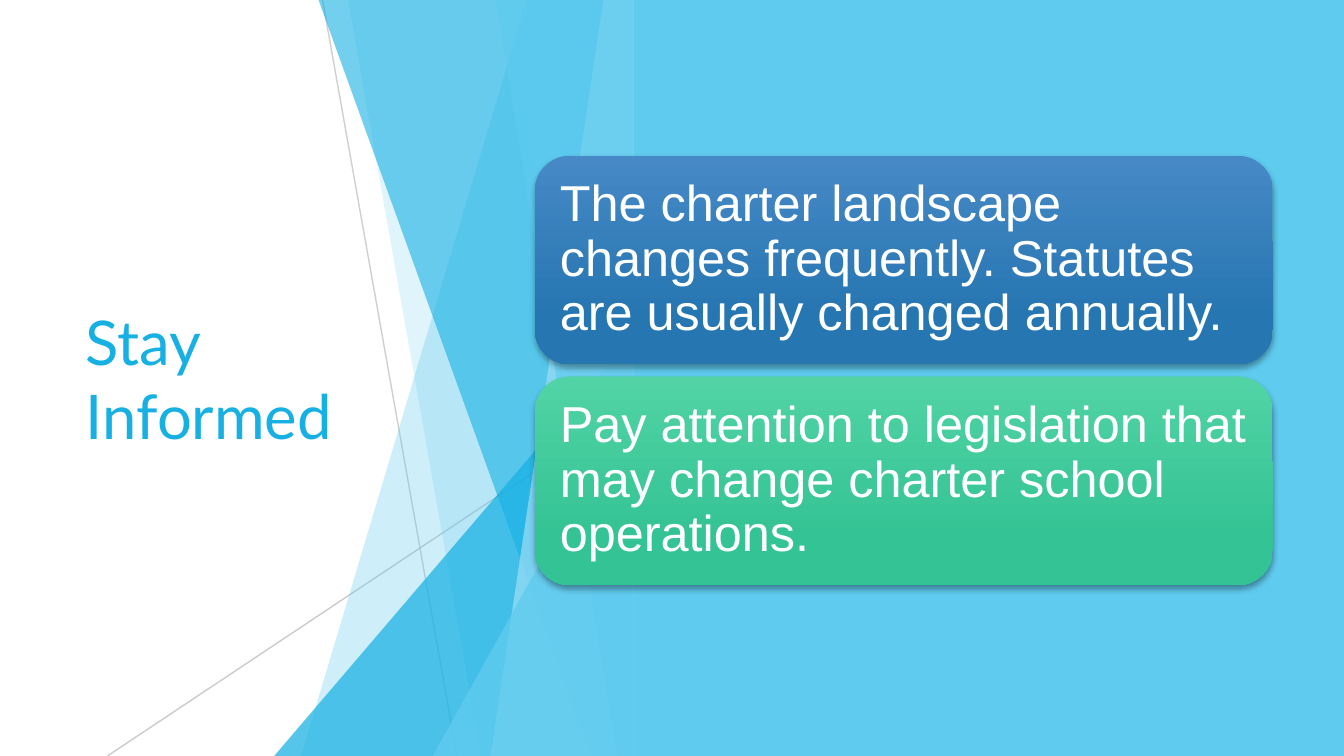
"""Build the "Stay Informed" slide: facet artwork, a title and two message cards."""
from lxml import etree
from pptx import Presentation
from pptx import util as u
from pptx.dml.color import RGBColor
from pptx.enum import shapes, text
from pptx.oxml.ns import qn

WHITE = RGBColor(0xFF, 0xFF, 0xFF)
BLACK = RGBColor(0x00, 0x00, 0x00)
GREY = RGBColor(0xBF, 0xBF, 0xBF)
SKY = RGBColor(0x5F, 0xCB, 0xEF)
PALE_SKY = RGBColor(0x9E, 0xDF, 0xF5)
AZURE = RGBColor(0x16, 0xB0, 0xE3)
BLUE_TOP = RGBColor(0x46, 0x89, 0xC6)
BLUE_BASE = RGBColor(0x26, 0x76, 0xB1)
GREEN_TOP = RGBColor(0x51, 0xD3, 0xA5)
GREEN_BASE = RGBColor(0x34, 0xC3, 0x94)

WIDTH, HEIGHT = u.Inches(10), u.Inches(5.625)
PANEL_LEFT = 47.13
CARD_TOP, CARD_HEIGHT, CARD_PITCH = 20.6, 27.6, 29.2

RAYS = [
    ((24, 0), (34, 100), 75),
    ((PANEL_LEFT, 53.7), (8, 100), 80),
]
FACETS = [
    ("band", 39.2, 22.4, SKY, 30),
    ("band", 25.9, 35.8, SKY, 20),
    ("wedge", 20.4, 44.4, AZURE, 72),
    ("band", 23.7, 44, AZURE, 60),
    ("band", 44.9, 36.5, PALE_SKY, 70),
    ("band", 36.9, 45.9, SKY, 65),
    ("wedge", 32.2, 52.3, SKY, 80),
]
CARDS = [
    ("The charter landscape changes frequently. Statutes are usually changed annually.",
     BLUE_TOP, BLUE_BASE),
    ("Pay attention to legislation that may change charter school operations.",
     GREEN_TOP, GREEN_BASE),
]


def across(percent):
    return round(WIDTH * percent / 100)


def down(percent):
    return round(HEIGHT * percent / 100)


def area(left, top, width, height):
    return across(left), down(top), across(width), down(height)


def apply_format(target, values):
    for name, value in values.items():
        setattr(target, name, value)


def set_opacity(element, percent):
    for colour in element.spPr.iter(qn("a:srgbClr")):
        etree.SubElement(colour, qn("a:alpha"), val=str(percent * 1000))


def paint(shape, colour, opacity=100):
    shape.shadow.inherit = False
    shape.fill.solid()
    shape.fill.fore_color.rgb = colour
    shape.line.fill.background()
    if opacity < 100:
        set_opacity(shape._element, opacity)


def add_ray(slide, start, end, opacity):
    ray = slide.shapes.add_connector(
        shapes.MSO_CONNECTOR.STRAIGHT,
        across(start[0]), down(start[1]), across(end[0]), down(end[1]))
    ray.line.width = u.Pt(0.75)
    ray.line.color.rgb = GREY
    set_opacity(ray._element, opacity)
    etree.SubElement(ray._element.spPr, qn("a:effectLst"))


def add_band(slide, top_left, bottom_left, colour, opacity):
    outline = slide.shapes.build_freeform(across(top_left), 0)
    outline.add_line_segments([
        (across(PANEL_LEFT), 0), (across(PANEL_LEFT), HEIGHT), (across(bottom_left), HEIGHT)])
    paint(outline.convert_to_shape(), colour, opacity)


def add_wedge(slide, left, top, colour, opacity):
    wedge = slide.shapes.add_shape(
        shapes.MSO_SHAPE.ISOSCELES_TRIANGLE,
        *area(left, top, PANEL_LEFT - left, 100 - top))
    wedge.adjustments[0] = 1
    paint(wedge, colour, opacity)


def write(frame, wording, font, spacing, inset_x, inset_y):
    apply_format(frame, {
        "word_wrap": True,
        "vertical_anchor": text.MSO_ANCHOR.MIDDLE,
        "margin_left": inset_x, "margin_right": inset_x,
        "margin_top": inset_y, "margin_bottom": inset_y,
    })
    paragraph = frame.paragraphs[0]
    apply_format(paragraph, {"alignment": text.PP_ALIGN.LEFT, "line_spacing": spacing})
    run = paragraph.add_run()
    run.text = wording
    colour, *_ = font.values()
    run.font.color.rgb = colour
    apply_format(run.font, {name: font[name] for name in ("name", "size")})


def add_title(slide, wording):
    title = slide.shapes.add_textbox(*area(5.4, 20.1, 29.1, 59.7))
    write(title.text_frame, wording,
          {"colour": AZURE, "name": "Lato", "size": u.Pt(33)}, 1.0,
          u.Inches(0.1), u.Inches(0.05))


def add_panel(slide):
    panel = slide.shapes.add_shape(
        shapes.MSO_SHAPE.RECTANGLE, *area(PANEL_LEFT, 0, 100 - PANEL_LEFT, 100))
    paint(panel, SKY)


def cast_shadow(shape):
    shape.shadow.inherit = False
    effects = shape._element.spPr.find(qn("a:effectLst"))
    shadow = etree.SubElement(
        effects, qn("a:outerShdw"), blurRad=str(u.Pt(3)), dist=str(u.Pt(2)),
        dir="5400000", rotWithShape="0")
    colour = etree.SubElement(shadow, qn("a:srgbClr"), val=str(BLACK))
    etree.SubElement(colour, qn("a:alpha"), val="35000")


def add_card(slide, row, wording, top_colour, base_colour):
    card = slide.shapes.add_shape(
        shapes.MSO_SHAPE.ROUNDED_RECTANGLE,
        *area(39.8, CARD_TOP + row * CARD_PITCH, 54.9, CARD_HEIGHT))
    card.line.fill.background()
    card.fill.gradient()
    card.fill.gradient_angle = 270
    stops = [(0, top_colour), (0.78, base_colour)]
    for stop, (position, colour) in zip(card.fill.gradient_stops, stops):
        stop.position = position
        stop.color.rgb = colour
    cast_shadow(card)
    write(card.text_frame, wording,
          {"colour": WHITE, "name": "Arial", "size": u.Pt(27)}, 0.9,
          u.Inches(0.11), u.Inches(0.11))


def main():
    deck = Presentation()
    apply_format(deck, {"slide_width": WIDTH, "slide_height": HEIGHT})
    slide = deck.slides.add_slide(deck.slide_layouts[6])
    for ray in RAYS:
        add_ray(slide, *ray)
    draw = {"band": add_band, "wedge": add_wedge}
    for kind, *facet in FACETS:
        draw[kind](slide, *facet)
    add_title(slide, "Stay Informed")
    add_panel(slide)
    for row, card in enumerate(CARDS):
        add_card(slide, row, *card)
    deck.save("out.pptx")


if __name__ == "__main__":
    main()
